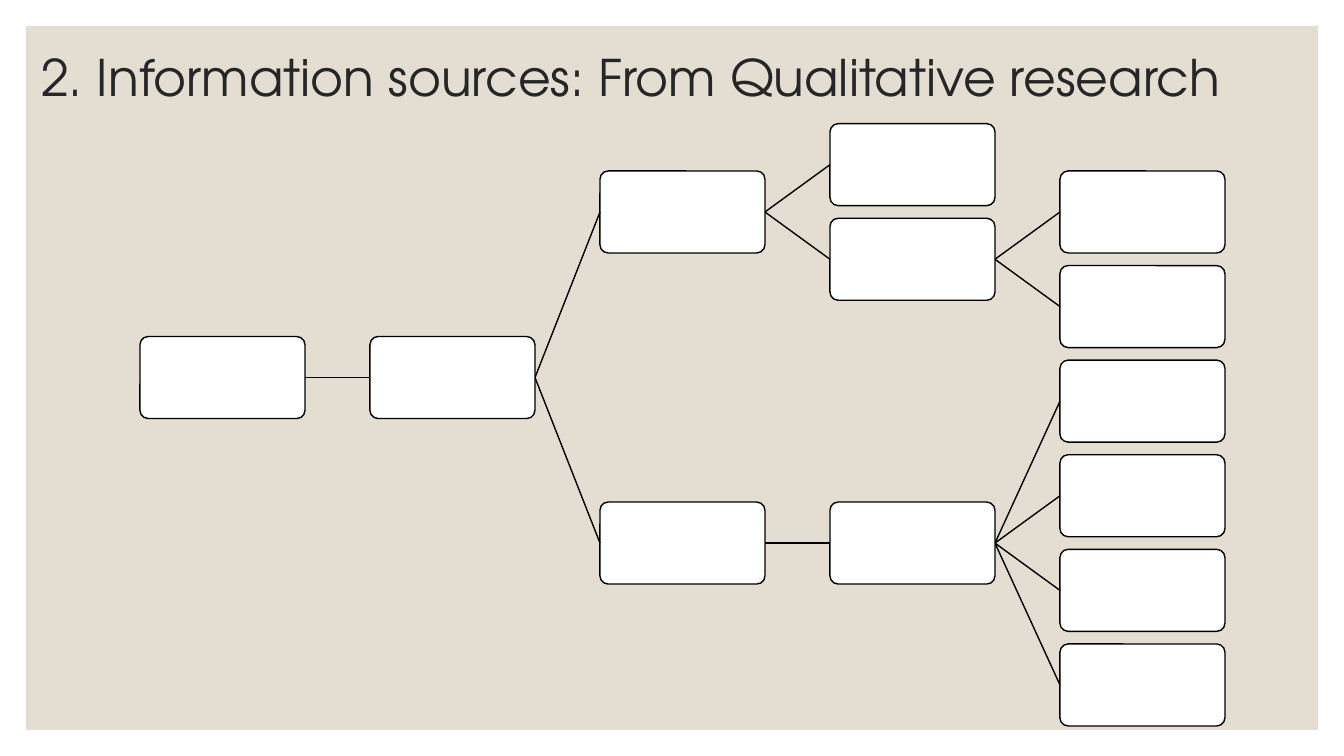
from lxml import etree
from pptx import Presentation
from pptx import util as u
from pptx.dml.color import RGBColor
from pptx.enum import shapes, text
from pptx.oxml.ns import qn

TITLE = "2. Information sources: From Qualitative research"
FONT = "TeX Gyre Adventor"
PANEL, INK, WHITE, BLACK = "E3DED1", "262626", "FFFFFF", "000000"

# Each branch is a (column, children) pair; a leaf holds its row instead of children.
UPPER = (2, [(3, -0.5), (3, [(4, 0), (4, 1)])])
LOWER = (2, [(3, [(4, 2), (4, 3), (4, 4), (4, 5)])])
TREE = (0, [(1, [UPPER, LOWER])])

PX = 914400 / 100.8
PAGE_SIZE = 1344, 756
PANEL_AREA = 26, 26, 1292, 704
TITLE_AREA = 31, 37, 1245, 87
BOX_WIDTH, BOX_HEIGHT = 165, 82
FIRST_LEFT, COLUMN_STEP = 140, 230
FIRST_MIDDLE, LAST_MIDDLE, LAST_ROW = 212, 685, 5


def px(*lengths):
    return [u.Emu(round(length * PX)) for length in lengths]


def colour(value):
    return RGBColor.from_string(value)


def add_line(group, start, end):
    line = group.shapes.add_connector(
        shapes.MSO_CONNECTOR.STRAIGHT, *px(*start, *end))
    line.line.color.rgb = colour(BLACK)
    line.line.width = u.Pt(1)
    etree.SubElement(line.element.spPr, qn("a:effectLst"))


def add_box(group, left, middle):
    box = group.shapes.add_shape(
        shapes.MSO_SHAPE.ROUNDED_RECTANGLE,
        *px(left, middle - BOX_HEIGHT / 2, BOX_WIDTH, BOX_HEIGHT))
    box.adjustments[0] = 0.1
    box.shadow.inherit = False
    box.fill.solid()
    box.fill.fore_color.rgb = colour(WHITE)
    box.line.color.rgb = colour(BLACK)
    box.line.width = u.Pt(1)


def add_branch(group, branch):
    """Draw a branch centred on its children and return its left middle point."""
    column, content = branch
    left = FIRST_LEFT + column * COLUMN_STEP
    if isinstance(content, list):
        joints = [add_branch(group, child) for child in content]
        middle = sum(y for _, y in joints) / len(joints)
        for joint in joints:
            add_line(group, (left + BOX_WIDTH, middle), joint)
    else:
        row_step = (LAST_MIDDLE - FIRST_MIDDLE) / LAST_ROW
        middle = FIRST_MIDDLE + content * row_step
    add_box(group, left, middle)
    return left, middle


def add_title(page):
    title = page.shapes.title
    title.left, title.top, title.width, title.height = px(*TITLE_AREA)
    frame = title.text_frame
    frame.text = TITLE
    frame.word_wrap = True
    frame.auto_size = text.MSO_AUTO_SIZE.NONE
    frame.vertical_anchor = text.MSO_ANCHOR.MIDDLE
    para = frame.paragraphs[0]
    para.alignment = text.PP_ALIGN.LEFT
    para.line_spacing = 0.9
    font = para.runs[0].font
    font.name, font.size = FONT, u.Pt(36)
    font.color.rgb = colour(INK)


def add_panel(page):
    panel = page.shapes.add_shape(shapes.MSO_SHAPE.RECTANGLE, *px(*PANEL_AREA))
    panel.shadow.inherit = False
    panel.fill.solid()
    panel.fill.fore_color.rgb = colour(PANEL)
    panel.line.fill.background()
    page.shapes.title.element.addprevious(panel.element)


def main():
    deck = Presentation()
    deck.slide_width, deck.slide_height = px(*PAGE_SIZE)
    page = deck.slides.add_slide(deck.slide_layouts.get_by_name("Title Only"))
    add_panel(page)
    add_title(page)
    add_branch(page.shapes.add_group_shape(), TREE)
    deck.save("out.pptx")


if __name__ == "__main__":
    main()
